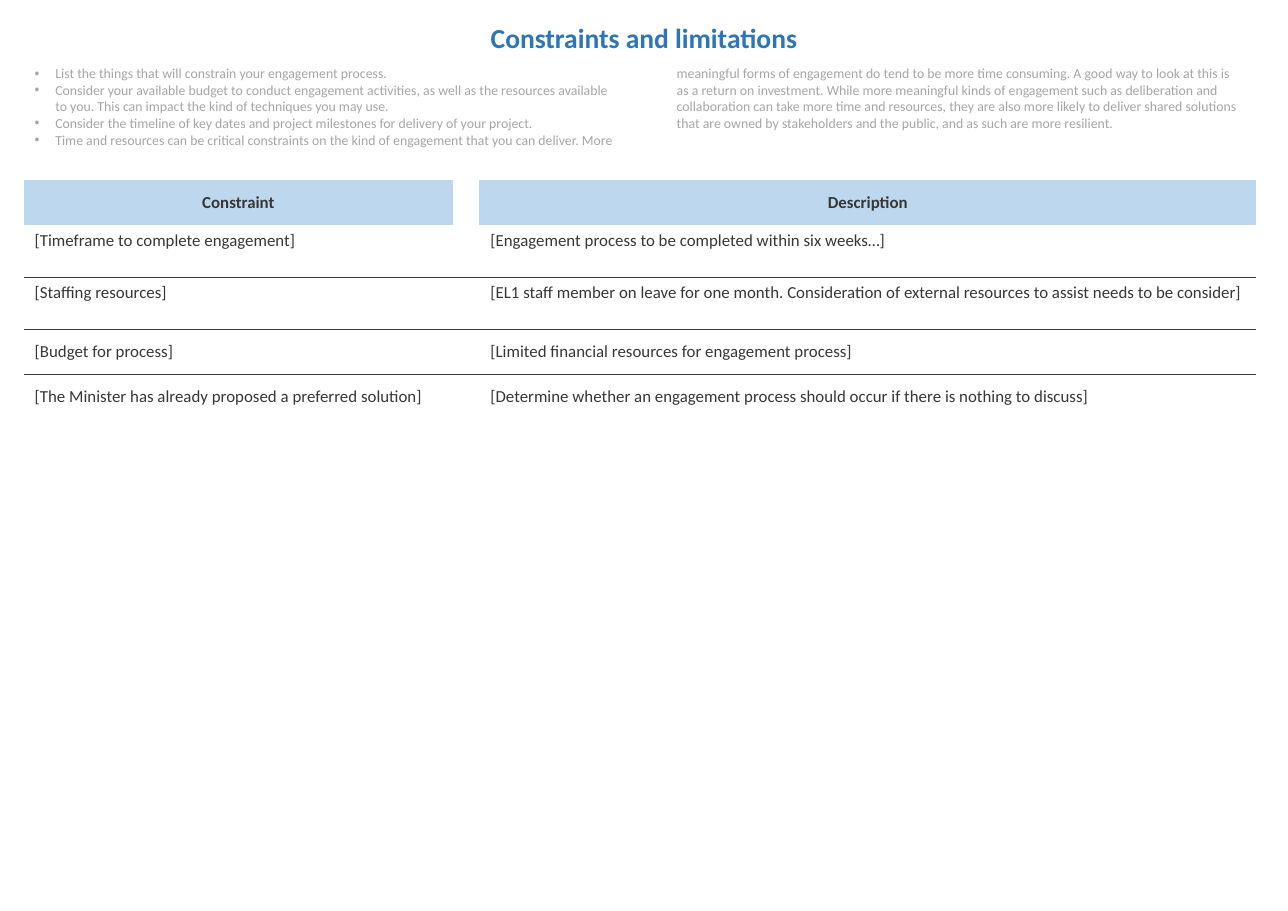
from lxml import etree
from pptx import Presentation
from pptx.dml.color import RGBColor
from pptx.enum.text import MSO_ANCHOR, MSO_AUTO_SIZE, PP_ALIGN
from pptx.oxml.ns import qn
from pptx.util import Pt

TOP, MIDDLE = MSO_ANCHOR.TOP, MSO_ANCHOR.MIDDLE
LEFT, CENTER = PP_ALIGN.LEFT, PP_ALIGN.CENTER
NO_FIT = MSO_AUTO_SIZE.NONE

# Content
HEADING = "Constraints and limitations"
GUIDANCE = [
    "List the things that will constrain your engagement process.",
    "Consider your available budget to conduct engagement activities, as well as the "
    "resources available to you. This can impact the kind of techniques you may use.",
    "Consider the timeline of key dates and project milestones for delivery of your project.",
    "Time and resources can be critical constraints on the kind of engagement that you can "
    "deliver. More meaningful forms of engagement do tend to be more time consuming. A good "
    "way to look at this is as a return on investment. While more meaningful kinds of "
    "engagement such as deliberation and collaboration can take more time and resources, "
    "they are also more likely to deliver shared solutions that are owned by stakeholders "
    "and the public, and as such are more resilient.",
]
HEADER = ("Constraint", "Description")
CONSTRAINTS = [
    ("[Timeframe to complete engagement]",
     "[Engagement process to be completed within six weeks…]"),
    ("[Staffing resources]",
     "[EL1 staff member on leave for one month. Consideration of external resources "
     "to assist needs to be consider]"),
    ("[Budget for process]",
     "[Limited financial resources for engagement process]"),
    ("[The Minister has already proposed a preferred solution]",
     "[Determine whether an engagement process should occur if there is nothing to discuss]"),
]

# Format, lengths in points
COLORS = {"heading": "2E75B6", "guidance": "A6A6A6", "ink": "373737", "header": "BDD7EE"}
FONT = "Calibri"
PAGE_W, PAGE_H = 841.68, 595.44
MARGIN = 15.5
CONTENT_W = PAGE_W - 2 * MARGIN - 6.5
COLUMN_GAP = 22.3
BULLET_INDENT = 13.5
TABLE_TOP = 117.8
TABLE_COLUMNS = (280.6, 16.8, 507.6)
ROW_H, TALL_ROW_H = 29.4, 34
TALL_ROWS = (1, 2)  # text sits at the top of these rows
RULED_ROWS = (1, 2, 3)  # rows with a line below


def write(paragraph, text, size=11, color="ink", bold=False, align=LEFT, spacing=1.0, after=0):
    paragraph.alignment = align
    paragraph.line_spacing = spacing
    paragraph.space_before, paragraph.space_after = Pt(0), Pt(after)
    run = paragraph.add_run()
    run.text = text
    run.font.name, run.font.size, run.font.bold = FONT, Pt(size), bold
    run.font.color.rgb = RGBColor.from_string(COLORS[color])


def place(holder, left, top, width, height):
    holder.left, holder.top, holder.width, holder.height = map(Pt, (left, top, width, height))
    frame = holder.text_frame
    frame.word_wrap, frame.auto_size, frame.vertical_anchor = True, NO_FIT, TOP
    return frame


def set_borders(cell, ruled):
    properties = cell._tc.get_or_add_tcPr()
    for position, side in enumerate(("lnL", "lnR", "lnT", "lnB")):
        line = etree.Element(qn(f"a:{side}"), w=str(Pt(0.5)))
        if side in ruled:
            fill = etree.SubElement(line, qn("a:solidFill"))
            etree.SubElement(fill, qn("a:srgbClr"), val=COLORS["ink"])
        else:
            etree.SubElement(line, qn("a:noFill"))
        properties.insert(position, line)


prs = Presentation()
prs.slide_width, prs.slide_height = Pt(PAGE_W), Pt(PAGE_H)
slide = prs.slides.add_slide(prs.slide_layouts[1])
title, body = slide.placeholders

# Heading
heading = place(title, 0, 8.6, PAGE_W, 31)
write(heading.paragraphs[0], HEADING, size=18, color="heading", bold=True,
      align=CENTER, spacing=1.07, after=8)

# Guidance in two columns
guidance = place(body, MARGIN, 38.9, CONTENT_W, 64)
columns = guidance._txBody.bodyPr
columns.set("numCol", "2")
columns.set("spcCol", str(Pt(COLUMN_GAP)))
for number, advice in enumerate(GUIDANCE):
    bullet = guidance.add_paragraph() if number else guidance.paragraphs[0]
    write(bullet, advice, size=9, color="guidance")
    indents = bullet._p.get_or_add_pPr()
    indents.set("marL", str(Pt(BULLET_INDENT)))
    indents.set("indent", str(-Pt(BULLET_INDENT)))

# Constraints table, with an empty column as the gap
rows = [HEADER, *CONSTRAINTS]
heights = [TALL_ROW_H if r in TALL_ROWS else ROW_H for r in range(len(rows))]
table = slide.shapes.add_table(len(rows), len(TABLE_COLUMNS), Pt(MARGIN), Pt(TABLE_TOP),
                               Pt(sum(TABLE_COLUMNS)), Pt(sum(heights))).table
table.first_row = table.horz_banding = False
for column, width in zip(table.columns, TABLE_COLUMNS):
    column.width = Pt(width)

for r, (constraint, description) in enumerate(rows):
    table.rows[r].height = Pt(heights[r])
    is_header = r == 0
    ruled = [side for side, row in (("lnT", r - 1), ("lnB", r)) if row in RULED_ROWS]
    for c, entry in enumerate((constraint, "", description)):
        cell = table.cell(r, c)
        cell.vertical_anchor = TOP if r in TALL_ROWS else MIDDLE
        if is_header and entry:
            cell.fill.solid()
            cell.fill.fore_color.rgb = RGBColor.from_string(COLORS["header"])
        else:
            cell.fill.background()
        set_borders(cell, ruled)
        if entry:
            write(cell.text_frame.paragraphs[0], entry, bold=is_header,
                  align=CENTER if is_header else LEFT)

prs.save("out.pptx")
